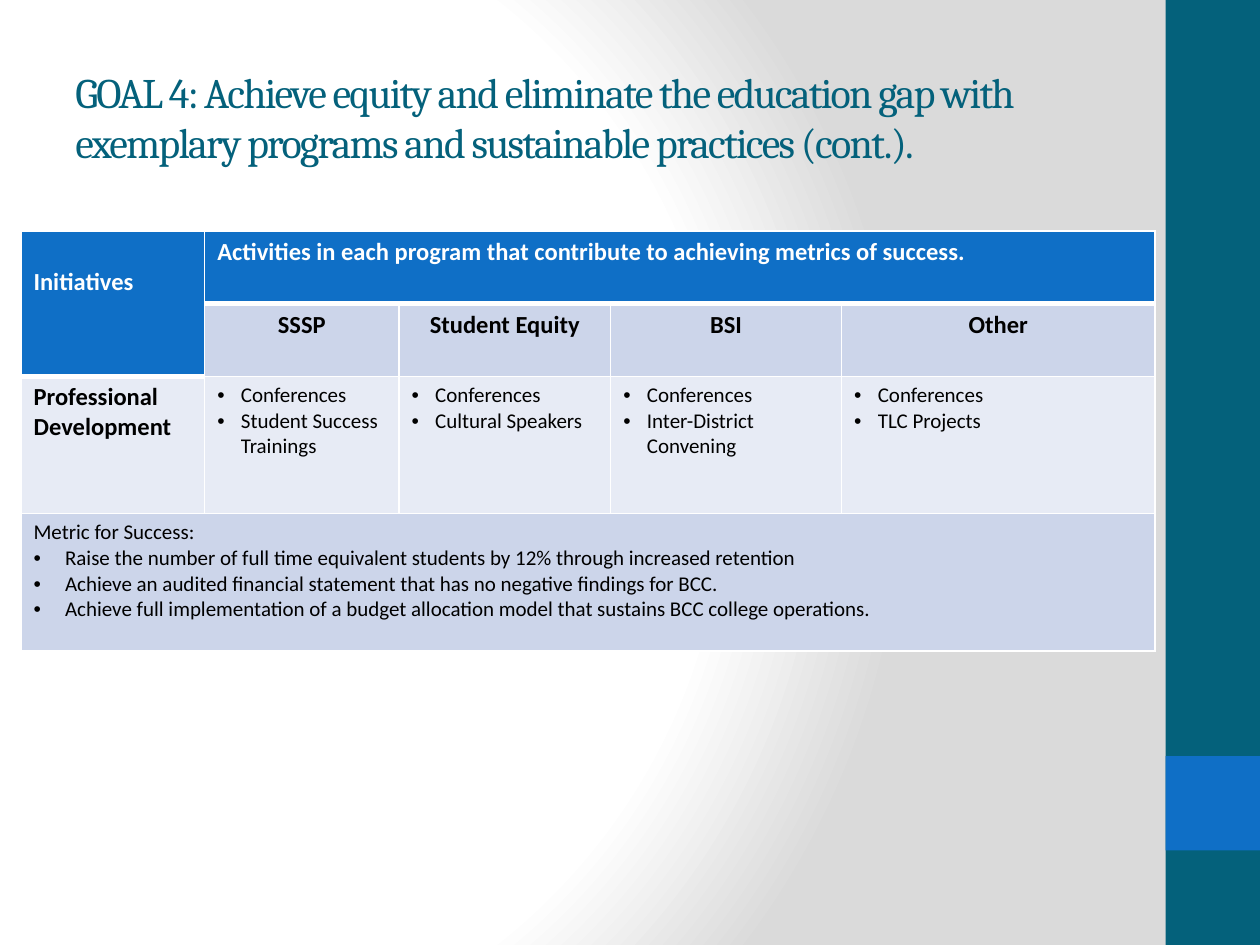
"""Build the Goal 4 slide with its table of initiatives."""
from dataclasses import dataclass
from pptx import Presentation
from pptx.dml.color import RGBColor
from pptx.enum.shapes import MSO_SHAPE
from pptx.enum.text import MSO_ANCHOR, PP_ALIGN
from pptx.oxml import parse_xml
from pptx.oxml.ns import nsdecls
from pptx.util import Pt


@dataclass(frozen=True)
class Theme:
    """Hold the colours, fonts and type sizes."""
    teal: str = "04617B"
    blue: str = "0F6FC6"
    white: str = "FFFFFF"
    black: str = "000000"
    gray: str = "DADADA"
    band: str = "CCD5EA"
    pale: str = "E7EBF5"
    serif: str = "Cambria"
    sans: str = "Calibri"
    title: int = 24
    head: int = 14
    body: int = 12


LOOK = Theme()
WIDTHS = (105, 111, 121, 132, 179)
HEIGHTS = (41.5, 41.5, 78.5, 78.5)
GROUPS = ("SSSP", "Student Equity", "BSI", "Other")
TASKS = ("Student Success Trainings", "Cultural Speakers",
         "Inter-District Convening", "TLC Projects")
GOALS = (
    "Raise the number of full time equivalent students by 12% through increased retention",
    "Achieve an audited financial statement that has no negative findings for BCC.",
    "Achieve full implementation of a budget allocation model that sustains BCC college operations.",
)


def apply(item, values):
    """Set each named value on an object."""
    for name, value in values.items():
        setattr(item, name, value)


def write(par, text, color, **font):
    """Add one styled run to a paragraph."""
    run = par.add_run()
    run.text = text
    apply(run.font, font)
    run.font.color.rgb = RGBColor.from_string(color)
    return run


def paint(slide):
    """Lay the radial gradient behind the slide."""
    stops = ((0, LOOK.white), (75, LOOK.white), (100, LOOK.gray))
    marks = "".join(f'<a:gs pos="{pos * 1000}"><a:srgbClr val="{color}"/></a:gs>'
                    for pos, color in stops)
    slide.element.cSld.insert(0, parse_xml(
        f'<p:bg {nsdecls("p", "a")}><p:bgPr><a:gradFill rotWithShape="1">'
        f'<a:gsLst>{marks}</a:gsLst><a:path path="circle">'
        '<a:fillToRect l="20000" t="50000" r="100000" b="50000"/></a:path>'
        '</a:gradFill><a:effectLst/></p:bgPr></p:bg>'))


def block(slide, top, height, color):
    """Draw one plain block of the side band."""
    shape = slide.shapes.add_shape(
        MSO_SHAPE.RECTANGLE, Pt(666), Pt(top), Pt(54), Pt(height))
    shape.shadow.inherit = False
    shape.fill.solid()
    shape.fill.fore_color.rgb = RGBColor.from_string(color)
    shape.line.fill.background()


def title(slide, text):
    """Place the slide title."""
    frame = slide.shapes.add_textbox(Pt(36), Pt(21.6), Pt(600), Pt(90)).text_frame
    apply(frame, {"word_wrap": True, "vertical_anchor": MSO_ANCHOR.MIDDLE})
    run = write(frame.paragraphs[0], text, LOOK.teal,
                name=LOOK.serif, size=Pt(LOOK.title))
    run.font._element.set("spc", "-100")


def style(cell, fill, top=1, bottom=1):
    """Give a cell its white borders and its fill."""
    props = cell._tc.get_or_add_tcPr()
    for side, width in {"L": 1, "R": 1, "T": top, "B": bottom}.items():
        props.append(parse_xml(
            f'<a:ln{side} {nsdecls("a")} w="{Pt(width)}"><a:solidFill>'
            f'<a:srgbClr val="{LOOK.white}"/></a:solidFill></a:ln{side}>'))
    cell.fill.solid()
    cell.fill.fore_color.rgb = RGBColor.from_string(fill)


def label(cell, text, color=LOOK.black, align=PP_ALIGN.LEFT):
    """Write a bold heading in a cell."""
    par = cell.text_frame.paragraphs[0]
    par.alignment = align
    write(par, text, color, name=LOOK.sans, size=Pt(LOOK.head), bold=True)


def items(cell, lines, indent, lead=None):
    """Write a bullet list, with an optional lead line."""
    frame = cell.text_frame
    rows = ([lead] if lead else []) + list(lines)
    for num, text in enumerate(rows):
        par = frame.add_paragraph() if num else frame.paragraphs[0]
        write(par, text, LOOK.black, name=LOOK.sans,
              size=Pt(LOOK.body), bold=False)
        if text == lead:
            continue
        props = par._p.get_or_add_pPr()
        for name, value in {"marL": indent, "indent": -indent}.items():
            props.set(name, str(Pt(value)))
        props.append(parse_xml(f'<a:buFont {nsdecls("a")} typeface="Arial"/>'))
        props.append(parse_xml(f'<a:buChar {nsdecls("a")} char="•"/>'))


def shade(grid):
    """Style every cell by its row and column."""
    for row in range(len(HEIGHTS)):
        for col in range(len(WIDTHS)):
            head = row == 0 or (row == 1 and col == 0)
            fill = LOOK.blue if head else (LOOK.pale if row == 2 else LOOK.band)
            edge = 1 if col == 0 else 0
            style(grid.cell(row, col), fill,
                  top=3 if row == 1 + edge else 1,
                  bottom=3 if row == edge or (head and col == 0) else 1)


def table(slide):
    """Build the table of initiatives and activities."""
    grid = slide.shapes.add_table(
        len(HEIGHTS), len(WIDTHS), Pt(12), Pt(132),
        Pt(sum(WIDTHS)), Pt(sum(HEIGHTS))).table
    for part, size in zip(grid.columns, WIDTHS):
        part.width = Pt(size)
    for part, size in zip(grid.rows, HEIGHTS):
        part.height = Pt(size)
    shade(grid)
    for start, end in (((0, 0), (1, 0)), ((0, 1), (0, 4)), ((3, 0), (3, 4))):
        grid.cell(*start).merge(grid.cell(*end))
    grid.cell(0, 0).margin_top = Pt(20.6)
    label(grid.cell(0, 0), "Initiatives", LOOK.white)
    label(grid.cell(0, 1),
          "Activities in each program that contribute to achieving metrics of success.",
          LOOK.white)
    label(grid.cell(2, 0), "Professional Development")
    for col, (group, task) in enumerate(zip(GROUPS, TASKS), 1):
        label(grid.cell(1, col), group, align=PP_ALIGN.CENTER)
        items(grid.cell(2, col), ("Conferences", task), 13.5)
    items(grid.cell(3, 0), GOALS, 18, "Metric for Success:")


def main():
    """Assemble and save the slide."""
    deck = Presentation()
    apply(deck, {"slide_width": Pt(720), "slide_height": Pt(540)})
    slide = deck.slides.add_slide(deck.slide_layouts[6])
    paint(slide)
    block(slide, 0, 540, LOOK.teal)
    block(slide, 432, 54, LOOK.blue)
    table(slide)
    title(slide, "GOAL 4: Achieve equity and eliminate the education gap with "
                 "exemplary programs and sustainable practices (cont.).")
    deck.save("out.pptx")


if __name__ == "__main__":
    main()
